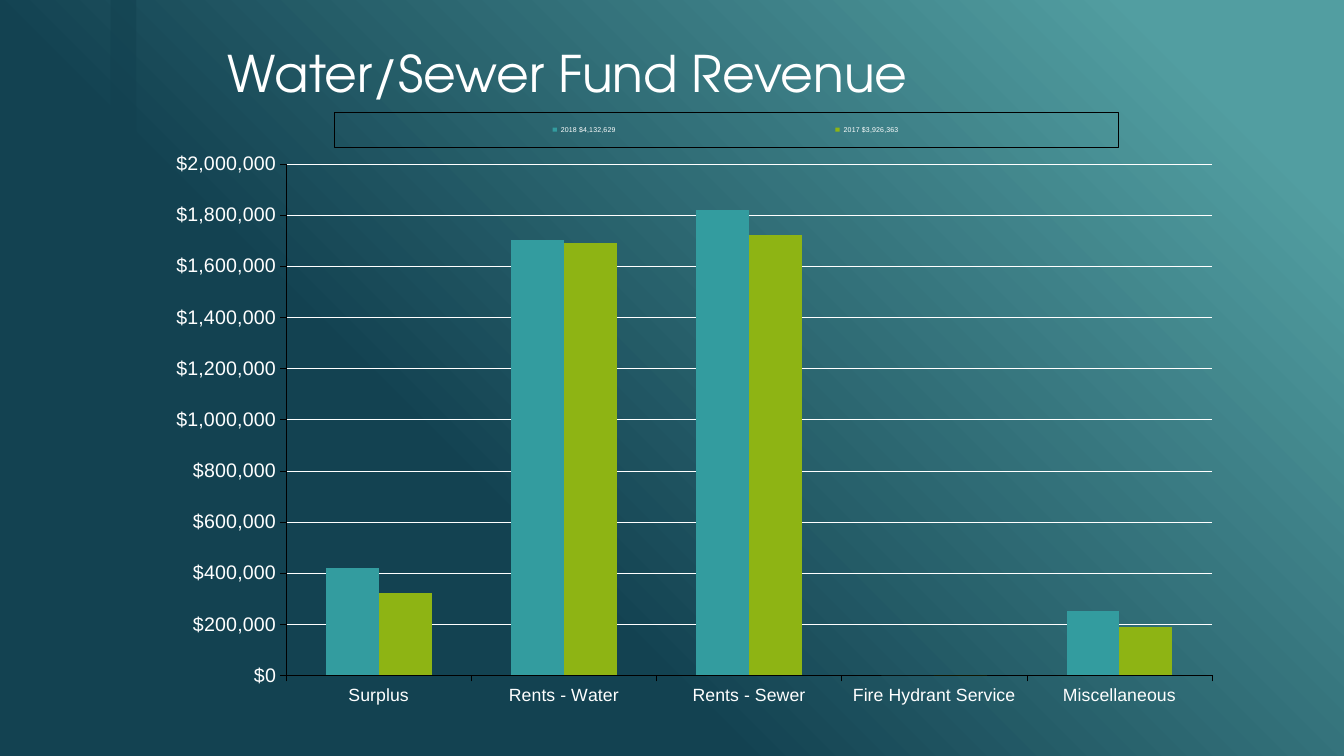
from dataclasses import dataclass
from typing import Any

from lxml.etree import SubElement, fromstring
from pptx import Presentation
from pptx.chart.data import CategoryChartData
from pptx.dml.color import RGBColor
from pptx.enum.chart import XL_CHART_TYPE as ChartType
from pptx.enum.chart import XL_LEGEND_POSITION as LegendPos
from pptx.enum.chart import XL_TICK_LABEL_POSITION as LabelPos
from pptx.enum.chart import XL_TICK_MARK as TickMark
from pptx.enum.shapes import MSO_SHAPE as Shape
from pptx.enum.text import MSO_ANCHOR as Anchor
from pptx.oxml.ns import nsdecls, qn
from pptx.util import Cm, Pt

COLORS = {
    "light": "529EA1",
    "dark": "134251",
    "white": "FFFFFF",
    "black": "000000",
    "teal": "339C9F",
    "green": "8EB414",
}
CATEGORIES = ["Surplus", "Rents - Water", "Rents - Sewer", "Fire Hydrant Service", "Miscellaneous"]


@dataclass(frozen=True)
class Box:
    """A rectangle, in centimetres or as fractions of a chart."""
    x: float
    y: float
    w: float
    h: float

    def lengths(self) -> tuple:
        return Cm(self.x), Cm(self.y), Cm(self.w), Cm(self.h)


@dataclass(frozen=True)
class Year:
    name: str
    values: tuple
    color: str


YEARS = [
    Year("2018 $4,132,629", (420000, 1700000, 1820000, 0, 250000), "teal"),
    Year("2017 $3,926,363", (320000, 1690000, 1720000, 0, 190000), "green"),
]
STOPS = [(10, "light"), (65, "dark"), (100, "dark")]
BAND = Box(2.79, 0, 0.64, 19.05)
TITLE = Box(5.49, 0.43, 23.06, 2.29)
CHART = Box(4.22, 2.69, 26.7, 15.8)
PLOT = Box(0.112, 0.091, 0.874, 0.816)
LEGEND = Box(0.157, 0.008, 0.74, 0.057)


def rgb(name: str) -> RGBColor:
    return RGBColor.from_string(COLORS[name])


def set_attrs(obj: Any, **values: Any) -> None:
    for key, value in values.items():
        setattr(obj, key, value)


def set_font(font: Any, size: float, name: str = "Arial", color: str = "white") -> None:
    set_attrs(font, size=Pt(size), name=name, bold=False)
    font.color.rgb = rgb(color)


def set_line(line: Any, color: str) -> None:
    line.color.rgb = rgb(color)
    line.width = Pt(0.25)


def set_background(s: Any) -> None:
    fill = s.background.fill
    fill.gradient()
    fill.gradient_angle = 225
    stops = s.element.find(f".//{qn('a:gsLst')}")
    for old in list(stops):
        stops.remove(old)
    for percent, color in STOPS:
        gs = SubElement(stops, qn("a:gs"), pos=str(percent * 1000))
        SubElement(gs, qn("a:srgbClr"), val=COLORS[color])


def add_band(s: Any) -> None:
    sp = s.shapes.add_shape(Shape.RECTANGLE, *BAND.lengths())
    sp.shadow.inherit = False
    sp.fill.solid()
    sp.fill.fore_color.rgb = rgb("dark")
    sp.line.fill.background()
    SubElement(sp.element.find(f".//{qn('a:srgbClr')}"), qn("a:alpha"), val="60000")


def add_title(s: Any) -> None:
    tf = s.shapes.add_textbox(*TITLE.lengths()).text_frame
    set_attrs(tf, word_wrap=True, vertical_anchor=Anchor.BOTTOM)
    p = tf.paragraphs[0]
    p.line_spacing = 0.9
    r = p.add_run()
    r.text = "Water/Sewer Fund Revenue"
    set_font(r.font, 36, "TeX Gyre Adventor")


def set_layout(parent: Any, box: Box, index: int, inner: bool = False) -> None:
    """Place a chart part by hand, its layout being child number index."""
    for old in parent.findall(qn("c:layout")):
        parent.remove(old)
    layout = fromstring(f"<c:layout {nsdecls('c')}><c:manualLayout/></c:layout>")
    items = {"layoutTarget": "inner"} if inner else {}
    items |= {"xMode": "edge", "yMode": "edge", "x": box.x, "y": box.y, "w": box.w, "h": box.h}
    for tag, value in items.items():
        SubElement(layout[0], qn(f"c:{tag}"), val=str(value))
    parent.insert(index, layout)


def style_axis(axis: Any, size: float) -> None:
    set_attrs(axis, major_tick_mark=TickMark.OUTSIDE, minor_tick_mark=TickMark.NONE)
    set_font(axis.tick_labels.font, size)
    set_line(axis.format.line, "black")


def style_legend(chart: Any) -> None:
    chart.has_legend = True
    legend = chart.legend
    set_attrs(legend, position=LegendPos.TOP, include_in_layout=False)
    set_font(legend.font, 5)
    element = legend._element
    set_layout(element, LEGEND, 1)
    element.find(qn("c:overlay")).addnext(fromstring(
        f'<c:spPr {nsdecls("c", "a")}><a:noFill/><a:ln w="3175"><a:solidFill>'
        f'<a:srgbClr val="{COLORS["black"]}"/></a:solidFill></a:ln></c:spPr>'))


def add_revenue_chart(s: Any) -> None:
    data = CategoryChartData()
    data.categories = CATEGORIES
    for year in YEARS:
        data.add_series(year.name, year.values)
    chart = s.shapes.add_chart(ChartType.COLUMN_CLUSTERED, *CHART.lengths(), data).chart
    chart.has_title = False
    set_font(chart.font, 12, color="black")

    plot = chart.plots[0]
    set_attrs(plot, gap_width=150, overlap=0, vary_by_categories=False)
    for series, year in zip(plot.series, YEARS):
        series.format.fill.solid()
        series.format.fill.fore_color.rgb = rgb(year.color)

    style_axis(chart.category_axis, 12.6)
    chart.category_axis.tick_label_position = LabelPos.LOW
    values = chart.value_axis
    style_axis(values, 14)
    set_attrs(values, minimum_scale=0, maximum_scale=2000000, major_unit=200000,
              has_major_gridlines=True)
    set_attrs(values.tick_labels, number_format="\\$#,##0", number_format_is_linked=False)
    set_line(values.major_gridlines.format.line, "white")

    style_legend(chart)
    set_layout(chart._chartSpace.find(f".//{qn('c:plotArea')}"), PLOT, 0, inner=True)


def main() -> None:
    prs = Presentation()
    set_attrs(prs, slide_width=Cm(33.87), slide_height=Cm(19.05))
    s = prs.slides.add_slide(prs.slide_layouts[6])
    set_background(s)
    add_band(s)
    add_title(s)
    add_revenue_chart(s)
    prs.save("out.pptx")


if __name__ == "__main__":
    main()
